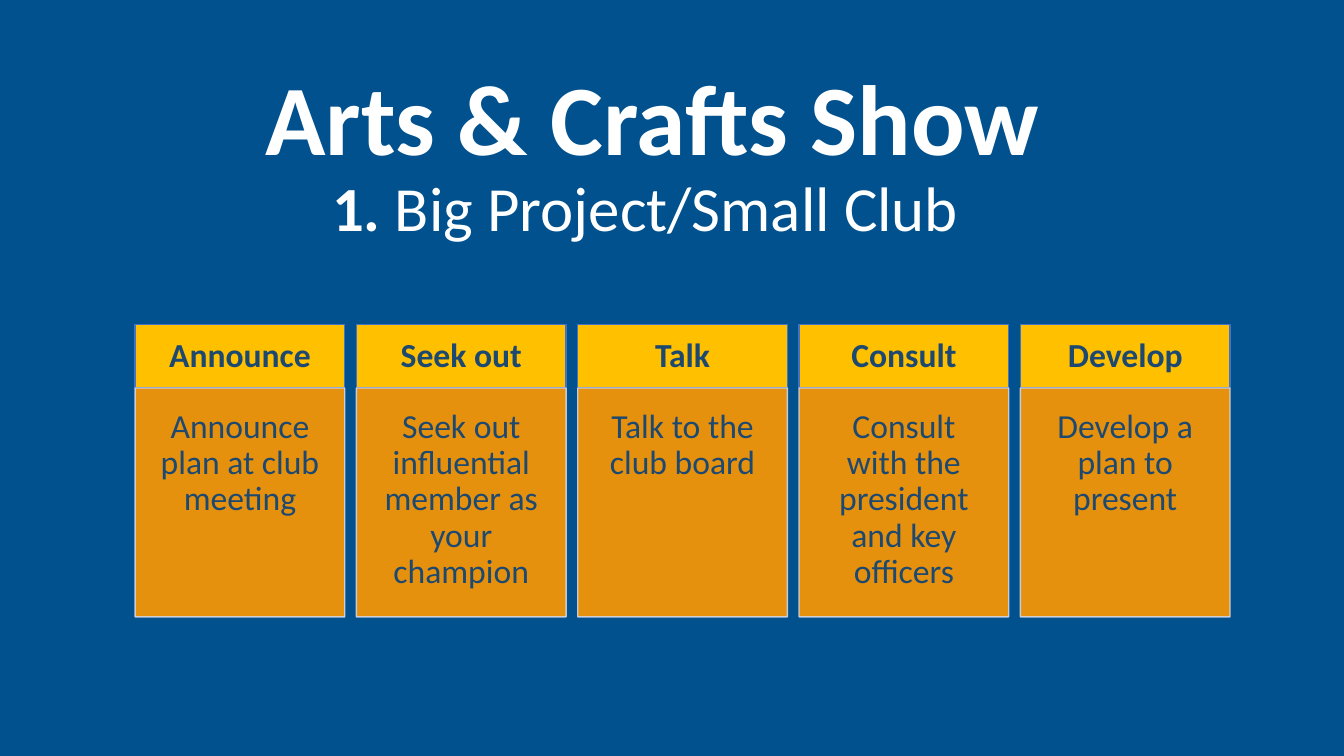
from dataclasses import dataclass

from lxml import etree
from pptx import Presentation
from pptx.dml.color import RGBColor
from pptx.enum.shapes import MSO_SHAPE
from pptx.enum.text import MSO_ANCHOR, PP_ALIGN
from pptx.oxml.ns import qn
from pptx.slide import Slide
from pptx.util import Inches, Pt

RECTANGLE = MSO_SHAPE.RECTANGLE
CENTER = PP_ALIGN.CENTER
TOP, MIDDLE, BOTTOM = MSO_ANCHOR.TOP, MSO_ANCHOR.MIDDLE, MSO_ANCHOR.BOTTOM


@dataclass(frozen=True)
class Theme:
    font: str = "Calibri"
    background: RGBColor = RGBColor.from_string("00518E")
    title: RGBColor = RGBColor.from_string("FFFFFF")
    text: RGBColor = RGBColor.from_string("1D4971")
    header_fill: RGBColor = RGBColor.from_string("FFC000")
    header_line: RGBColor = RGBColor.from_string("4472C4")
    body_fill: RGBColor = RGBColor.from_string("FF9900")
    body_line: RGBColor = RGBColor.from_string("CFD5EA")
    title_size: float = 71.2
    subtitle_size: float = 44.9
    step_size: float = 24


@dataclass(frozen=True)
class Step:
    name: str
    detail: str


@dataclass(frozen=True)
class Band:
    top: float
    height: float
    fill: RGBColor
    line: RGBColor
    inset: float
    anchor: MSO_ANCHOR
    bold: bool
    opacity: int


THEME = Theme()
HEADER = Band(3.22, 0.63, THEME.header_fill, THEME.header_line, 0.16, MIDDLE, True, 100)
BODY = Band(3.85, 2.27, THEME.body_fill, THEME.body_line, 0.21, TOP, False, 90)
STEPS = [
    Step("Announce", "Announce plan at club meeting"),
    Step("Seek out", "Seek out influential member as your champion"),
    Step("Talk", "Talk to the club board"),
    Step("Consult", "Consult with the president and key officers"),
    Step("Develop", "Develop a plan to present"),
]
FIRST_LEFT, STEP_WIDTH, STEP_PITCH = 1.34, 2.08, 2.195


def add_title(page: Slide) -> None:
    """Add the show title with the numbered project line below it."""
    box = page.shapes.add_textbox(Inches(0.72), Inches(0.38), Inches(11.5), Inches(2.1))
    frame = box.text_frame
    frame.word_wrap = True
    frame.vertical_anchor = BOTTOM
    para = frame.paragraphs[0]
    para.alignment = CENTER
    para.line_spacing = 0.9
    para.space_before = Pt(10)
    para.font.name = THEME.font
    para.font.color.rgb = THEME.title
    spans = [
        ("Arts & Crafts Show", THEME.title_size, True),
        ("1. ", THEME.subtitle_size, True),
        ("Big Project/Small Club ", THEME.subtitle_size, False),
    ]
    for index, (text, size, bold) in enumerate(spans):
        if index == 1:
            para.add_line_break()
        span = para.add_run()
        span.text = text
        span.font.size = Pt(size)
        span.font.bold = bold


def add_band(page: Slide, left: float, band: Band, text: str) -> None:
    """Add one filled rectangle of a step with its text."""
    box = page.shapes.add_shape(
        RECTANGLE, Inches(left), Inches(band.top), Inches(STEP_WIDTH), Inches(band.height)
    )
    box.shadow.inherit = False
    box.fill.solid()
    box.fill.fore_color.rgb = band.fill
    box.line.color.rgb = band.line
    box.line.width = Pt(1)
    if band.opacity < 100:
        for color in box.element.spPr.iter(qn("a:srgbClr")):
            etree.SubElement(color, qn("a:alpha"), val=str(band.opacity * 1000))
    frame = box.text_frame
    frame.word_wrap = True
    frame.vertical_anchor = band.anchor
    frame.margin_left = frame.margin_right = Inches(band.inset)
    frame.margin_top = frame.margin_bottom = Inches(band.inset)
    para = frame.paragraphs[0]
    para.text = text
    para.alignment = CENTER
    para.line_spacing = 0.9
    para.font.name = THEME.font
    para.font.size = Pt(THEME.step_size)
    para.font.bold = band.bold
    para.font.color.rgb = THEME.text


def main() -> None:
    """Build the slide and save the deck."""
    deck = Presentation()
    deck.slide_width, deck.slide_height = Inches(13.33), Inches(7.5)
    page = deck.slides.add_slide(deck.slide_layouts[6])
    page.background.fill.solid()
    page.background.fill.fore_color.rgb = THEME.background
    add_title(page)
    for index, step in enumerate(STEPS):
        left = FIRST_LEFT + index * STEP_PITCH
        add_band(page, left, HEADER, step.name)
        add_band(page, left, BODY, step.detail)
    deck.save("out.pptx")


if __name__ == "__main__":
    main()
